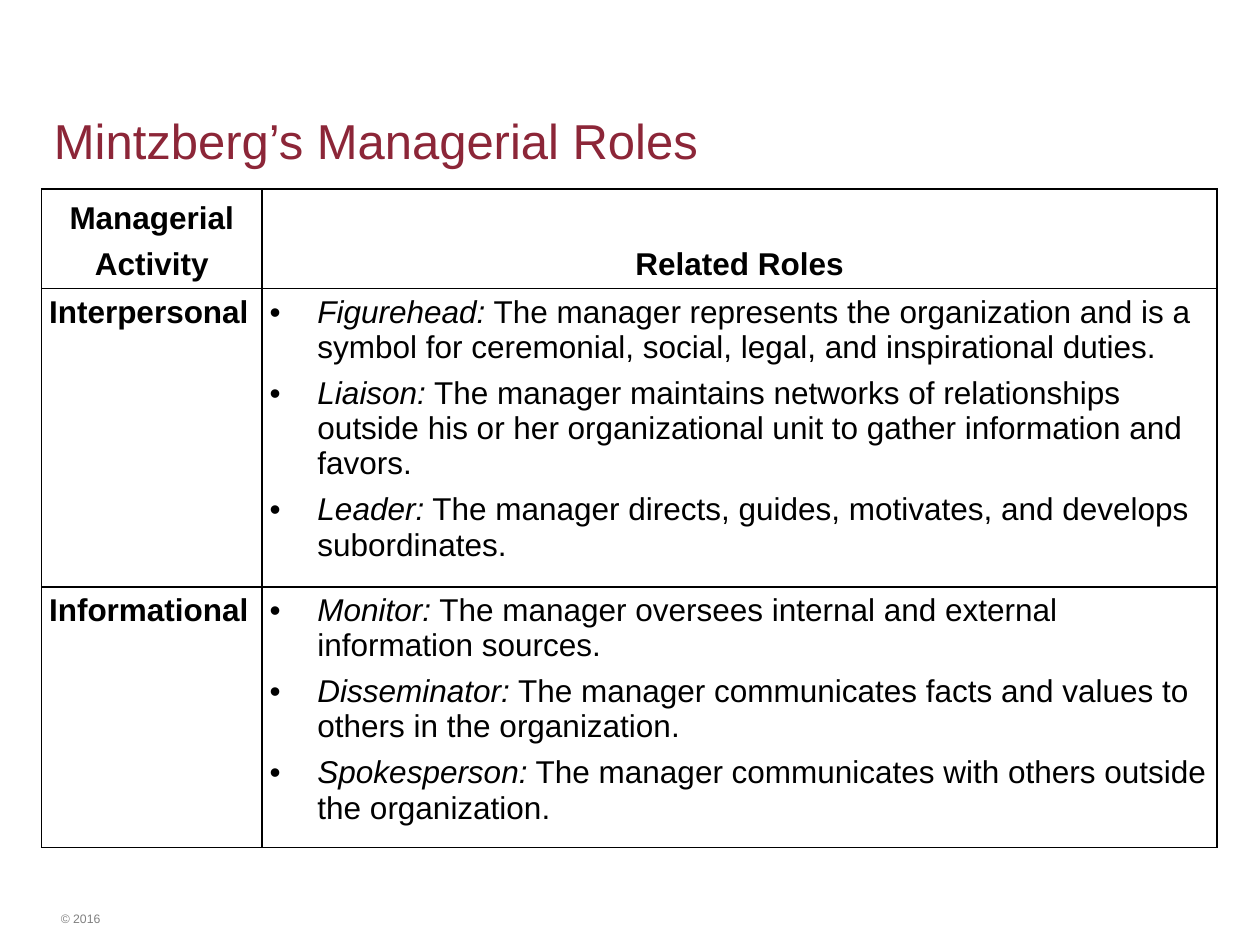
from lxml.etree import SubElement
from pptx import Presentation
from pptx.dml.color import RGBColor
from pptx.enum.text import MSO_ANCHOR as Anchor, PP_ALIGN as Align
from pptx.oxml.ns import qn
from pptx.util import Inches, Pt

BLACK, WHITE, MAROON, GRAY = "000000", "FFFFFF", "8C2638", "808080"
COLUMN_WIDTHS = (1.75, 7.58)
ROW_HEIGHTS = (0.79, 2.36, 2.07)
ACTIVITIES = {
    "Interpersonal": [
        ("Figurehead:", " The manager represents the organization and is a symbol "
                        "for ceremonial, social, legal, and inspirational duties."),
        ("Liaison:", " The manager maintains networks of relationships outside his or her "
                     "organizational unit to gather information and favors."),
        ("Leader:", " The manager directs, guides, motivates, and develops subordinates."),
    ],
    "Informational": [
        ("Monitor:", " The manager oversees internal and external information sources."),
        ("Disseminator:", " The manager communicates facts and values to others in the organization."),
        ("Spokesperson:", " The manager communicates with others outside the organization."),
    ],
}


def rgb(color):
    """Turn a hex string into a colour."""
    return RGBColor.from_string(color)


def style(run, size, color, bold=False, italic=False):
    """Format one run of text."""
    font = run.font
    font.name, font.size, font.bold, font.italic = "Arial", Pt(size), bold, italic
    font.color.rgb = rgb(color)


def add_label(slide, text, box, size, color, align=Align.LEFT):
    """Add a one-line text box."""
    frame = slide.shapes.add_textbox(*map(Inches, box)).text_frame
    frame.word_wrap = True
    frame.text = text
    line = frame.paragraphs[0]
    line.alignment = align
    style(line.runs[0], size, color)


def add_borders(cell):
    """Draw a thin black line on every side of a cell."""
    properties = cell._tc.get_or_add_tcPr()
    for position, side in enumerate(("a:lnL", "a:lnR", "a:lnT", "a:lnB")):
        border = SubElement(properties, qn(side), w=str(Pt(1)))
        fill = SubElement(border, qn("a:solidFill"))
        SubElement(fill, qn("a:srgbClr"), val=BLACK)
        properties.insert(position, border)


def add_bullet(paragraph):
    """Give a paragraph a hanging bullet."""
    properties = paragraph._p.get_or_add_pPr()
    indent = Inches(0.38)
    properties.set("marL", str(indent))
    properties.set("indent", str(-indent))
    SubElement(properties, qn("a:buFont"), typeface="Arial")
    SubElement(properties, qn("a:buChar"), char="•")


def prepare_cell(cell, anchor=Anchor.TOP):
    """Set the fill, margins, anchor and borders of a cell."""
    cell.fill.solid()
    cell.fill.fore_color.rgb = rgb(WHITE)
    cell.margin_left = cell.margin_right = Inches(0.06)
    cell.margin_top = cell.margin_bottom = Inches(0.05)
    cell.vertical_anchor = anchor
    add_borders(cell)


def fill_heading(cell, text, align=Align.LEFT, anchor=Anchor.TOP):
    """Write bold lines into a cell."""
    prepare_cell(cell, anchor)
    cell.text_frame.text = text
    for line in cell.text_frame.paragraphs:
        line.alignment = align
        line.space_after = Pt(6)
        style(line.runs[0], 18, BLACK, bold=True)


def fill_roles(cell, roles):
    """Write a bulleted list of roles into a cell."""
    prepare_cell(cell)
    frame = cell.text_frame
    frame.text = "\n".join(name for name, _ in roles)
    for item, (_, duty) in zip(frame.paragraphs, roles):
        item.space_after = Pt(6)
        add_bullet(item)
        style(item.runs[0], 18, BLACK, italic=True)
        description = item.add_run()
        description.text = duty
        style(description, 18, BLACK)


def add_roles_table(slide):
    """Add the table of activities and their roles."""
    table = slide.shapes.add_table(
        len(ROW_HEIGHTS), len(COLUMN_WIDTHS), Inches(0.33), Inches(1.5),
        Inches(sum(COLUMN_WIDTHS)), Inches(sum(ROW_HEIGHTS))).table
    table.first_row = table.horz_banding = False
    for column, width in zip(table.columns, COLUMN_WIDTHS):
        column.width = Inches(width)
    for row, height in zip(table.rows, ROW_HEIGHTS):
        row.height = Inches(height)
    for column, heading in enumerate(("Managerial\nActivity", "Related Roles")):
        fill_heading(table.cell(0, column), heading, Align.CENTER, Anchor.BOTTOM)
    for row, (activity, roles) in enumerate(ACTIVITIES.items(), start=1):
        fill_heading(table.cell(row, 0), activity)
        fill_roles(table.cell(row, 1), roles)


def main():
    """Build and save the slide."""
    deck = Presentation()
    deck.slide_width, deck.slide_height = Inches(10), Inches(7.5)
    slide = deck.slides.add_slide(deck.slide_layouts[6])
    add_label(slide, "© 2016", (0.26, 7.18, 0.76, 0.22), 7, GRAY, Align.CENTER)
    add_label(slide, "Mintzberg’s Managerial Roles", (0.33, 0.83, 7.08, 0.57), 28, MAROON)
    add_roles_table(slide)
    deck.save("out.pptx")


if __name__ == "__main__":
    main()
